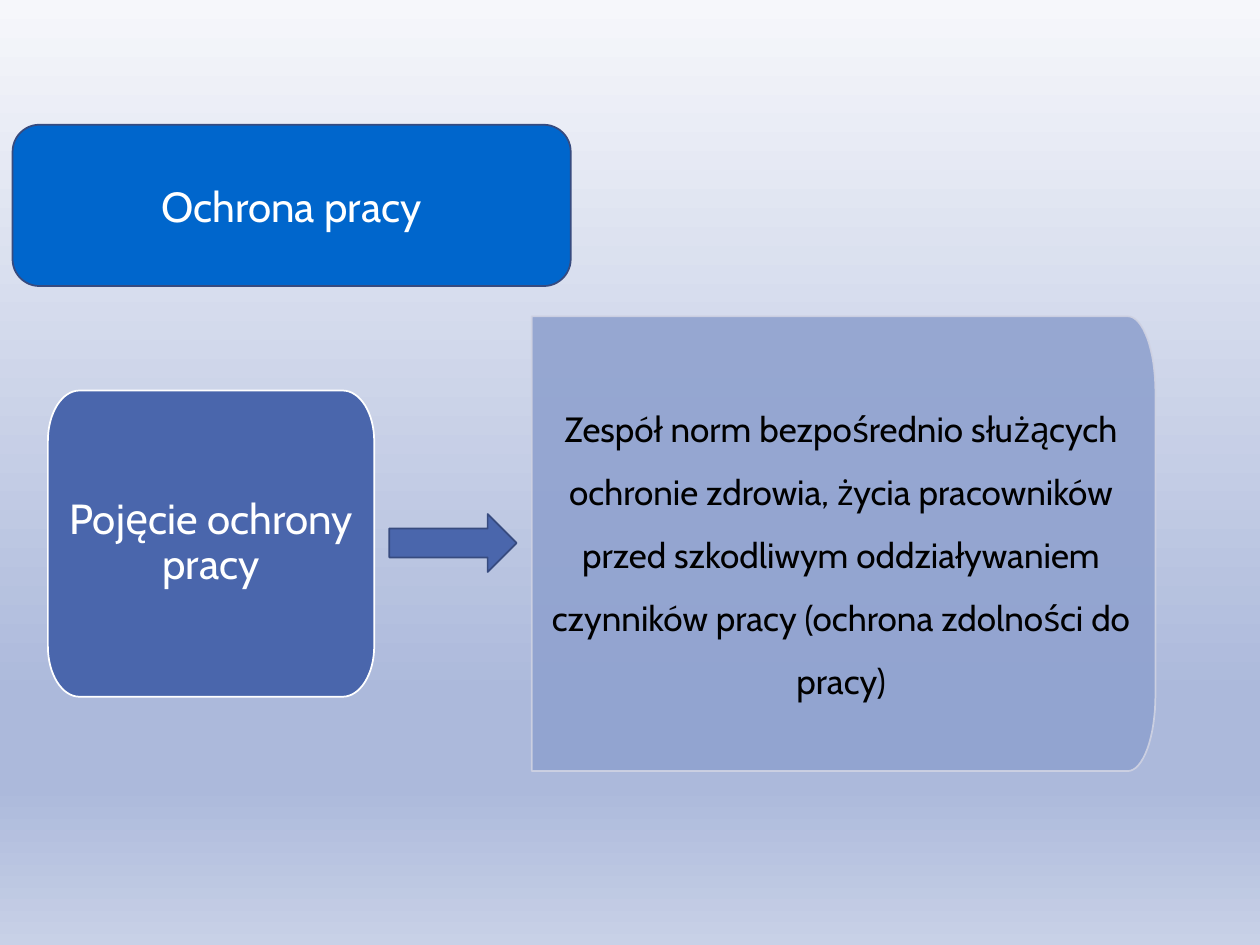
"""Build the slide that defines the notion of labour protection."""
from math import cos, pi, sin

from lxml.etree import SubElement
from pptx import Presentation
from pptx.dml.color import RGBColor
from pptx.enum.shapes import MSO_SHAPE
from pptx.enum.text import MSO_ANCHOR, PP_ALIGN
from pptx.oxml.ns import qn
from pptx.util import Inches, Pt

THEME = {
    "font": "Cabin", "heading_size": 24, "body_size": 20, "line_width": 1,
    "heading": "0066CC", "term": "4A66AC", "definition": "90A2CF",
    "outline": "374B7F", "pale": "D0D3E3", "white": "FFFFFF", "black": "000000",
    "panel_opacity": 90,
    "backdrop": [(0, "F6F7FB"), (74, "ACB9DB"), (83, "ACB9DB"), (100, "C8D1E7")],
}
COLUMNS, ROWS = 100, 75
ARC_STEPS = 16

deck = Presentation()
deck.slide_width, deck.slide_height = Inches(10), Inches(7.5)
column, row = deck.slide_width / COLUMNS, deck.slide_height / ROWS
slide = deck.slides.add_slide(deck.slide_layouts[6])


def rounded_panel(left, top, width, height, radius_x, radius_y, rounded_sides):
    """Draw a panel with elliptical corners on the given sides (0 left, 1 right)."""
    points = []
    for side, level, start in [(0, 0, pi), (1, 0, 1.5 * pi), (1, 1, 0), (0, 1, pi / 2)]:
        corner_x, corner_y = left + side * width, top + level * height
        if side not in rounded_sides:
            points.append((corner_x * column, corner_y * row))
            continue
        center_x = corner_x + (1 - 2 * side) * radius_x
        center_y = corner_y + (1 - 2 * level) * radius_y
        for step in range(ARC_STEPS + 1):
            angle = start + step / ARC_STEPS * pi / 2
            points.append(((center_x + radius_x * cos(angle)) * column,
                           (center_y + radius_y * sin(angle)) * row))
    outline = slide.shapes.build_freeform(*map(round, points[0]))
    outline.add_line_segments([tuple(map(round, point)) for point in points[1:]])
    return outline.convert_to_shape()


def preset(kind, left, top, width, height):
    """Add a preset shape placed in columns and rows."""
    return slide.shapes.add_shape(kind, round(left * column), round(top * row),
                                  round(width * column), round(height * row))


backdrop = slide.background.fill
backdrop.gradient()
backdrop.gradient_angle = 270
stops = next(slide.element.iter(qn("a:gsLst")))
stops.clear()
for position, color in THEME["backdrop"]:
    stop = SubElement(stops, qn("a:gs"), pos=str(position * 1000))
    SubElement(stop, qn("a:srgbClr"), val=color)

definition = rounded_panel(42.2, 25.1, 49.5, 36.1, 2.2, 6, {1})
term = rounded_panel(3.8, 31, 25.9, 24.3, 2.5, 4, {0, 1})
heading = preset(MSO_SHAPE.ROUNDED_RECTANGLE, 1, 9.9, 44.3, 12.8)
arrow = preset(MSO_SHAPE.RIGHT_ARROW, 30.9, 40.8, 10.1, 4.6)

for part, fill, line in [
    (definition, "definition", "pale"), (term, "term", "white"),
    (heading, "heading", "outline"), (arrow, "term", "outline"),
]:
    part.shadow.inherit = False
    part.fill.solid()
    part.fill.fore_color.rgb = RGBColor.from_string(THEME[fill])
    part.line.color.rgb = RGBColor.from_string(THEME[line])
    part.line.width = Pt(THEME["line_width"])

for color in definition.element.spPr.iter(qn("a:srgbClr")):
    SubElement(color, qn("a:alpha"), val=str(THEME["panel_opacity"] * 1000))

for part, wording, size, color, spacing, insets in [
    (definition, "Zespół norm bezpośrednio służących ochronie zdrowia, życia pracowników "
     "przed szkodliwym oddziaływaniem czynników pracy (ochrona zdolności do pracy)",
     "body_size", "black", 1.5, (0.03, 0.06, 0.07, 0.06)),
    (term, "Pojęcie ochrony pracy", "heading_size", "white", 0.9, (0.1, 0.08, 0.1, 0.08)),
    (heading, "Ochrona pracy", "heading_size", "white", 1.0, (0.1, 0.05, 0.1, 0.05)),
]:
    frame = part.text_frame
    frame.text = wording
    frame.word_wrap = True
    frame.vertical_anchor = MSO_ANCHOR.MIDDLE
    (frame.margin_left, frame.margin_top,
     frame.margin_right, frame.margin_bottom) = map(Inches, insets)
    paragraph = frame.paragraphs[0]
    paragraph.alignment = PP_ALIGN.CENTER
    paragraph.line_spacing = spacing
    font = paragraph.runs[0].font
    font.name, font.size = THEME["font"], Pt(THEME[size])
    font.color.rgb = RGBColor.from_string(THEME[color])

deck.save("out.pptx")
